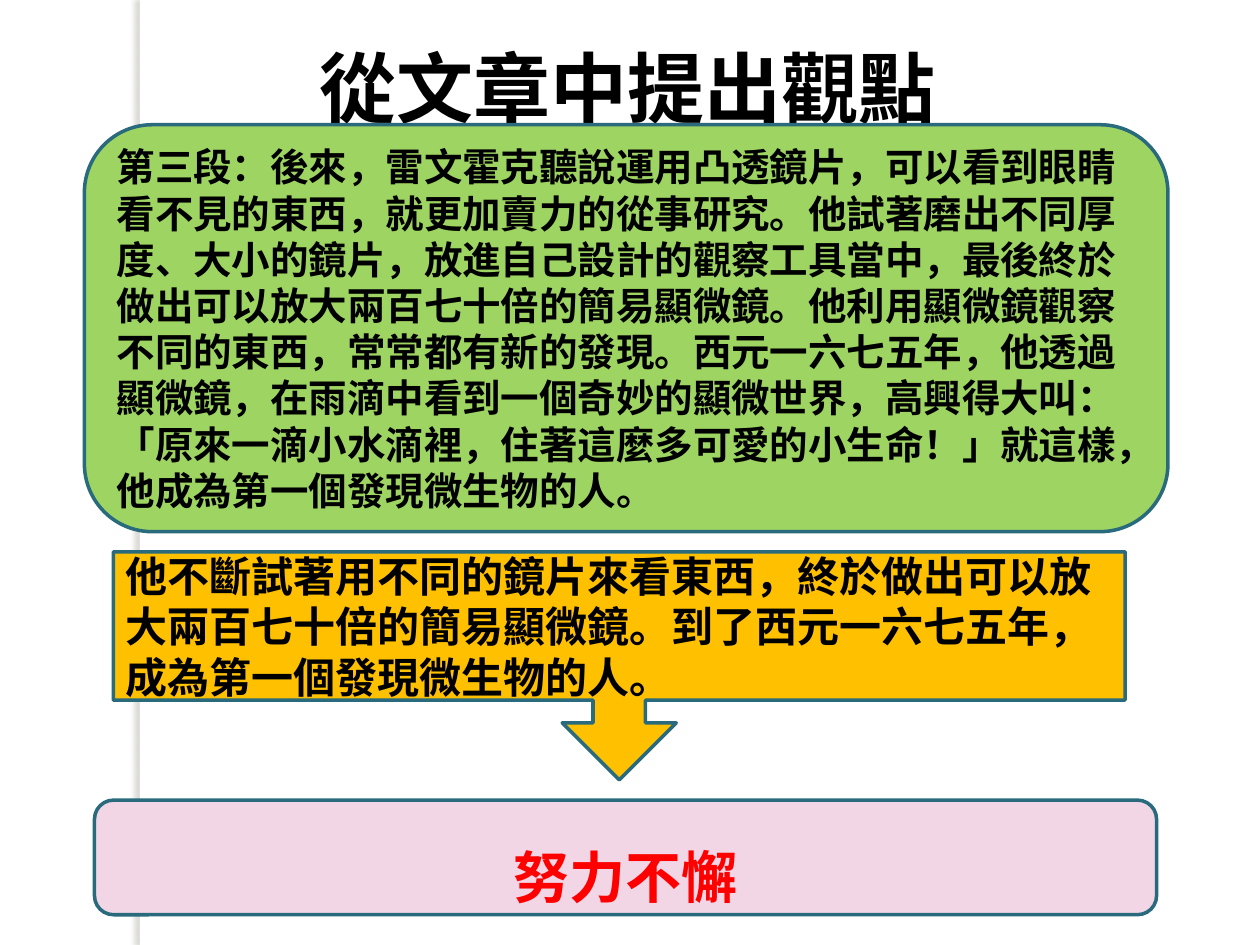
from lxml import etree
from pptx import Presentation
from pptx.dml.color import RGBColor
from pptx.enum.shapes import MSO_SHAPE as Shape
from pptx.enum.text import MSO_ANCHOR as Anchor, PP_ALIGN as Align
from pptx.oxml.ns import qn
from pptx.util import Inches, Pt

FONT = "Noto Sans CJK SC"
BORDER = "296B7C"
PARAGRAPH_TEXT = (
    "第三段：後來，雷文霍克聽說運用凸透鏡片，可以看到眼睛看不見的東西，"
    "就更加賣力的從事研究。他試著磨出不同厚度、大小的鏡片，"
    "放進自己設計的觀察工具當中，最後終於做出可以放大兩百七十倍的簡易顯微鏡。"
    "他利用顯微鏡觀察不同的東西，常常都有新的發現。西元一六七五年，"
    "他透過顯微鏡，在雨滴中看到一個奇妙的顯微世界，高興得大叫："
    "「原來一滴小水滴裡，住著這麼多可愛的小生命！」就這樣，"
    "他成為第一個發現微生物的人。"
)
SUMMARY_TEXT = (
    "他不斷試著用不同的鏡片來看東西，終於做出可以放大兩百七十倍的簡易顯微鏡。"
    "到了西元一六七五年，成為第一個發現微生物的人。"
)


def color(value):
    return RGBColor.from_string(value)


def write_text(shape, text, size, font_color="000000", align=Align.LEFT,
               anchor=Anchor.MIDDLE, top=0.0):
    frame = shape.text_frame
    frame.word_wrap = True
    frame.vertical_anchor = anchor
    frame.margin_left = frame.margin_right = Inches(0.1)
    frame.margin_top, frame.margin_bottom = Inches(top), Inches(0)
    paragraph = frame.paragraphs[0]
    paragraph.alignment = align
    paragraph.line_spacing = Pt(size * 1.2)
    paragraph.space_before = Pt(0)
    run = paragraph.add_run()
    run.text = text
    run.font.size = Pt(size)
    run.font.bold = True
    run.font.name = FONT
    run.font.color.rgb = color(font_color)
    properties = run.font._element
    etree.SubElement(properties, qn("a:ea")).set("typeface", FONT)


def add_panel(slide, kind, box, fill, line=BORDER):
    shape = slide.shapes.add_shape(kind, *map(Inches, box))
    shape.shadow.inherit = False
    shape.fill.solid()
    shape.fill.fore_color.rgb = color(fill)
    if line:
        shape.line.color.rgb = color(line)
        shape.line.width = Pt(2)
    else:
        shape.line.fill.background()
    return shape


def add_side_strip(slide, box):
    strip = add_panel(slide, Shape.RECTANGLE, box, "FFFFFF", line=None)
    effects = strip._element.spPr.find(qn("a:effectLst"))
    shadow = etree.SubElement(effects, qn("a:outerShdw"), blurRad=str(Pt(3)),
                              dist=str(Pt(3)), dir="10800000", rotWithShape="0")
    shade = etree.SubElement(shadow, qn("a:srgbClr"), val="736F63")
    etree.SubElement(shade, qn("a:alpha"), val="25000")


def add_title(slide, box):
    title = slide.shapes.title
    title.left, title.top, title.width, title.height = map(Inches, box)
    write_text(title, "從文章中提出觀點", 44, align=Align.CENTER,
               anchor=Anchor.TOP, top=0.11)


def add_passage(slide, box):
    passage = add_panel(slide, Shape.ROUNDED_RECTANGLE, box, "9ED462")
    write_text(passage, PARAGRAPH_TEXT, 22)


def add_summary(slide, box):
    summary = add_panel(slide, Shape.DOWN_ARROW_CALLOUT, box, "FFC000")
    for index, value in enumerate((0.23, 0.25, 0.25, 0.65)):
        summary.adjustments[index] = value
    write_text(summary, SUMMARY_TEXT, 24)


def add_viewpoint(slide, box):
    viewpoint = add_panel(slide, Shape.ROUNDED_RECTANGLE, box, "F2D6E6")
    write_text(viewpoint, "努力不懈", 32, font_color="FF0000",
               align=Align.CENTER, top=0.29)


def main():
    presentation = Presentation()
    presentation.slide_width, presentation.slide_height = Inches(10), Inches(7.5)
    slide = presentation.slides.add_slide(presentation.slide_layouts[5])
    add_side_strip(slide, (1.11, 0, 0.08, 7.5))
    add_title(slide, (0.51, 0.21, 8.95, 1.21))
    add_passage(slide, (0.67, 0.99, 8.6, 3.23))
    add_summary(slide, (0.9, 4.38, 8.03, 1.81))
    add_viewpoint(slide, (0.75, 6.35, 8.43, 0.91))
    presentation.save("out.pptx")


if __name__ == "__main__":
    main()
